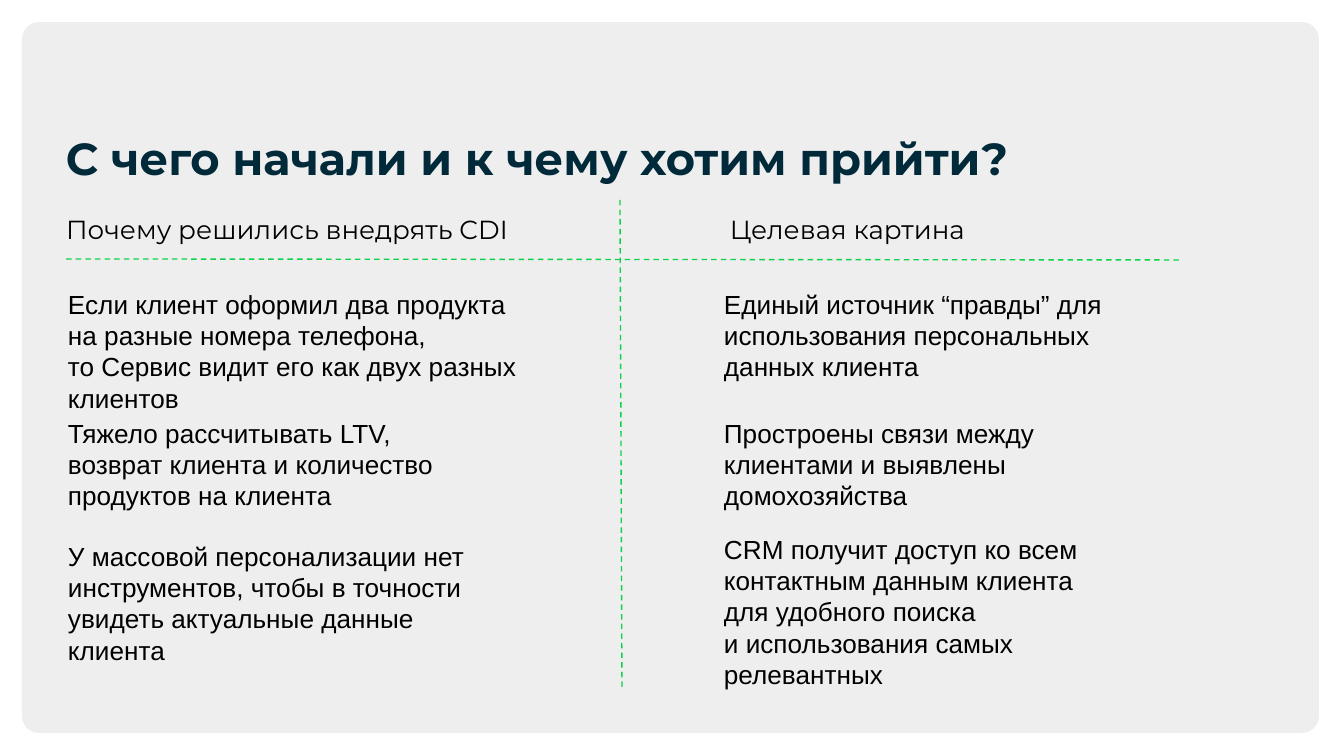
from pptx import Presentation
from pptx.dml.color import RGBColor
from pptx.enum.dml import MSO_LINE
from pptx.enum.shapes import MSO_CONNECTOR, MSO_SHAPE
from pptx.enum.text import MSO_AUTO_SIZE
from pptx.util import Pt
from lxml.etree import SubElement
from pptx.oxml.ns import qn

SCALE = 914400 / 134.4
BODY_FONT, HEADING_FONT = "Arial", "Montserrat"


def px(value):
    return round(value * SCALE)


def add_text(text, left, top, width, height, font_name, size=14, color="000000", bold=False, inset=13):
    box = slide.shapes.add_textbox(px(left), px(top), px(width), px(height))
    frame = box.text_frame
    frame.word_wrap = True
    frame.margin_left = frame.margin_right = px(13)
    frame.margin_top = frame.margin_bottom = px(inset)
    frame.text = text
    for run in frame.paragraphs[0].runs:
        run.font.name = font_name
        run.font.size = Pt(size)
        run.font.bold = bold
        run.font.color.rgb = RGBColor.from_string(color)
    return frame


presentation = Presentation()
presentation.slide_width = px(1344)
presentation.slide_height = px(756)
slide = presentation.slides.add_slide(presentation.slide_layouts[6])

panel = slide.shapes.add_shape(MSO_SHAPE.ROUNDED_RECTANGLE, px(22), px(22), px(1297), px(711))
panel.adjustments[0] = 0.024
panel.shadow.inherit = False
panel.fill.solid()
panel.fill.fore_color.rgb = RGBColor.from_string("EEEEEE")
panel.line.fill.background()

for text, left, width in [("Почему решились внедрять CDI", 53, 520), ("Целевая картина", 717, 394)]:
    heading = add_text(text, left, 200, width, 59, HEADING_FONT)
    heading.auto_size = MSO_AUTO_SIZE.SHAPE_TO_FIT_TEXT

for ends in [(620, 200, 622, 691), (1179, 260, 63, 259)]:
    divider = slide.shapes.add_connector(MSO_CONNECTOR.STRAIGHT, *map(px, ends))
    divider.line.color.rgb = RGBColor.from_string("0DD149")
    divider.line.width = Pt(0.75)
    divider.line.dash_style = MSO_LINE.DASH
    SubElement(divider._element.spPr, qn("a:effectLst"))

statements = [
    ("Если клиент оформил два продукта \vна разные номера телефона, \vто Сервис видит его как двух разных клиентов", 55, 275, 520, 153),
    ("Тяжело рассчитывать LTV, возврат клиента и количество продуктов на клиента", 55, 404, 441, 122),
    ("У массовой персонализации нет инструментов, чтобы в точности увидеть актуальные данные клиента", 55, 527, 441, 153),
    ("Единый источник “правды” для использования персональных данных клиента", 711, 275, 441, 122),
    ("Простроены связи между клиентами и выявлены домохозяйства", 711, 404, 441, 122),
    ("CRM получит доступ ко всем контактным данным клиента \vдля удобного поиска \vи использования самых релевантных", 711, 520, 441, 185),
]
for text, left, top, width, height in statements:
    statement = add_text(text, left, top, width, height, BODY_FONT)
    statement.auto_size = MSO_AUTO_SIZE.SHAPE_TO_FIT_TEXT

title = add_text("С чего начали и к чему хотим прийти?", 53, 134, 1095, 59, HEADING_FONT, 24, "002A3A", True, 7)
title.paragraphs[0].line_spacing = 0.8

presentation.save("out.pptx")
